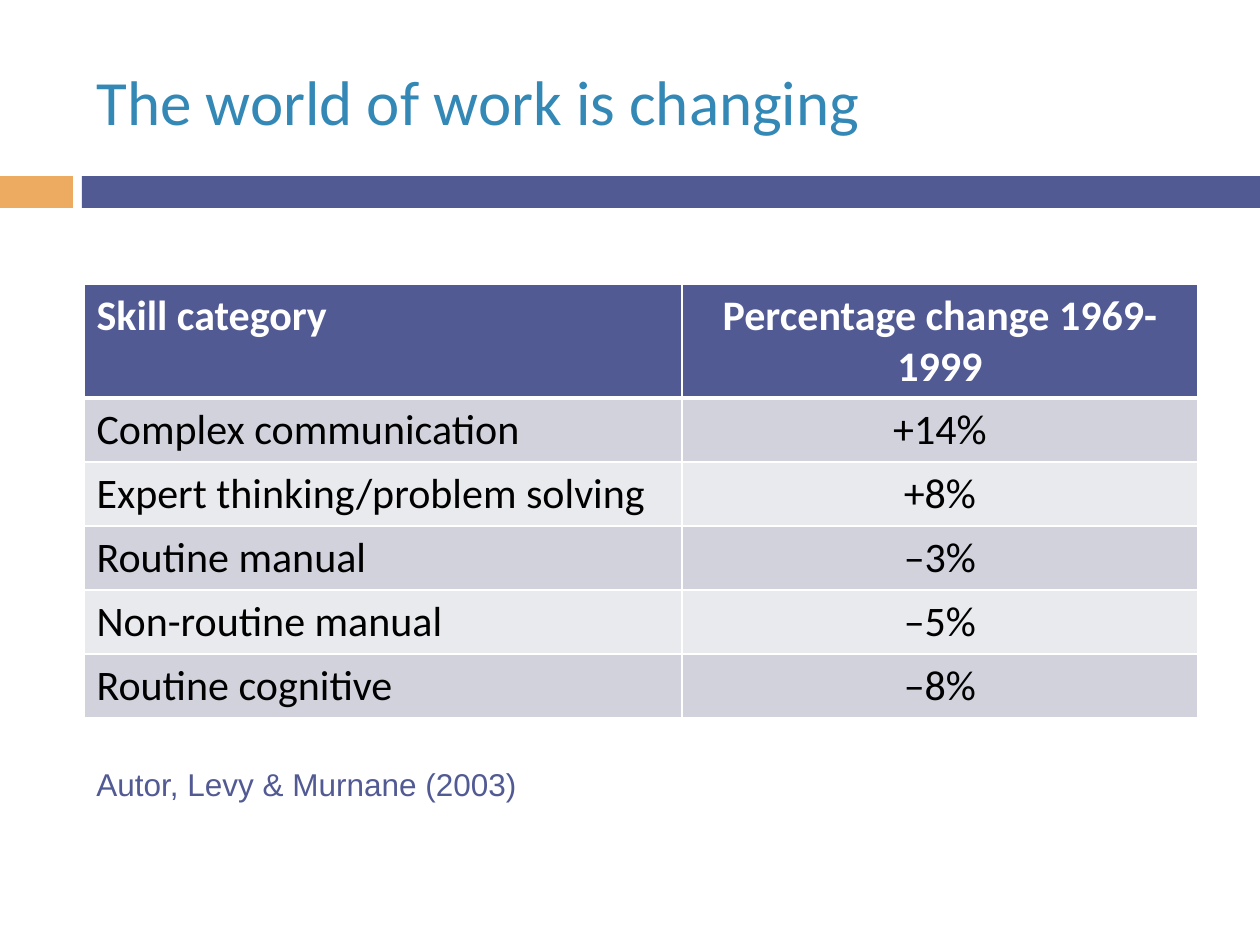
from dataclasses import dataclass

from lxml import etree
from pptx import Presentation
from pptx import util as u
from pptx.dml.color import RGBColor
from pptx.enum import shapes, text
from pptx.oxml import ns

EMU_PER_PX = 914400 / 126


@dataclass(frozen=True)
class Theme:
    title: str = "3488B6"
    primary: str = "525A93"
    accent: str = "EDAA61"
    band_dark: str = "D1D2DC"
    band_light: str = "E9EAEE"
    white: str = "FFFFFF"
    black: str = "000000"
    main_font: str = "Calibri"
    source_font: str = "Arial"
    title_size: int = 36
    table_size: int = 24
    source_size: int = 18


def px(length):
    return u.Emu(round(length * EMU_PER_PX))


class SlideBuilder:
    def __init__(self, slide, theme):
        self.slide = slide
        self.theme = theme

    def style(self, paragraph, font, size, color, bold=False):
        paragraph.font.name = font
        paragraph.font.size = u.Pt(size)
        paragraph.font.bold = bold
        paragraph.font.color.rgb = RGBColor.from_string(color)

    def bar(self, left, top, width, height, color):
        bar = self.slide.shapes.add_shape(
            shapes.MSO_SHAPE.RECTANGLE, *map(px, (left, top, width, height)))
        bar.shadow.inherit = False
        bar.fill.solid()
        bar.fill.fore_color.rgb = RGBColor.from_string(color)
        bar.line.fill.background()

    def text(self, left, top, width, height, words, font, size, color,
             anchor=text.MSO_ANCHOR.TOP):
        frame = self.slide.shapes.add_textbox(
            *map(px, (left, top, width, height))).text_frame
        frame.word_wrap = True
        frame.vertical_anchor = anchor
        frame.text = words
        self.style(frame.paragraphs[0], font, size, color)

    def border(self, cell, widths):
        properties = cell._tc.get_or_add_tcPr()
        # Border lines must come before the fill
        for position, (side, points) in enumerate(widths.items()):
            line = etree.Element(ns.qn(f"a:{side}"), w=str(u.Pt(points)))
            fill = etree.SubElement(line, ns.qn("a:solidFill"))
            etree.SubElement(fill, ns.qn("a:srgbClr"), val=self.theme.white)
            properties.insert(position, line)

    def table(self, left, top, column_widths, row_heights, rows):
        theme = self.theme
        table = self.slide.shapes.add_table(
            len(rows), len(column_widths), px(left), px(top),
            px(sum(column_widths)), px(sum(row_heights))).table
        for column, width in zip(table.columns, column_widths):
            column.width = px(width)
        for row, height in zip(table.rows, row_heights):
            row.height = px(height)

        for r, values in enumerate(rows):
            header = r == 0
            band = theme.band_dark if r % 2 else theme.band_light
            for c, value in enumerate(values):
                cell = table.cell(r, c)
                cell.text = value
                cell.fill.solid()
                cell.fill.fore_color.rgb = RGBColor.from_string(
                    theme.primary if header else band)
                paragraph = cell.text_frame.paragraphs[0]
                self.style(paragraph, theme.main_font, theme.table_size,
                           theme.white if header else theme.black, header)
                if c:
                    paragraph.alignment = text.PP_ALIGN.CENTER
                self.border(cell, {"lnL": 1, "lnR": 1,
                                   "lnT": 3 if r == 1 else 1,
                                   "lnB": 3 if header else 1})


def main():
    deck = Presentation()
    deck.slide_width, deck.slide_height = px(1260), px(945)
    theme = Theme()
    page = SlideBuilder(deck.slides.add_slide(deck.slide_layouts[6]), theme)

    # Divider under the title
    page.bar(0, 176, 73, 32, theme.accent)
    page.bar(82, 176, 1178, 32, theme.primary)

    # Title
    page.text(84, 32, 1124, 136, "The world of work is changing",
              theme.main_font, theme.title_size, theme.title,
              text.MSO_ANCHOR.MIDDLE)

    # Change in each skill category
    skills = [
        ("Skill category", "Percentage change 1969-1999"),
        ("Complex communication", "+14%"),
        ("Expert thinking/problem solving", "+8%"),
        ("Routine manual", "–3%"),
        ("Non-routine manual", "–5%"),
        ("Routine cognitive", "–8%"),
    ]
    page.table(84, 284, [598, 516], [114] + [64] * 5, skills)

    # Source of the figures
    page.text(84, 759, 451, 50, "Autor, Levy & Murnane (2003)",
              theme.source_font, theme.source_size, theme.primary)

    deck.save("out.pptx")


if __name__ == "__main__":
    main()
